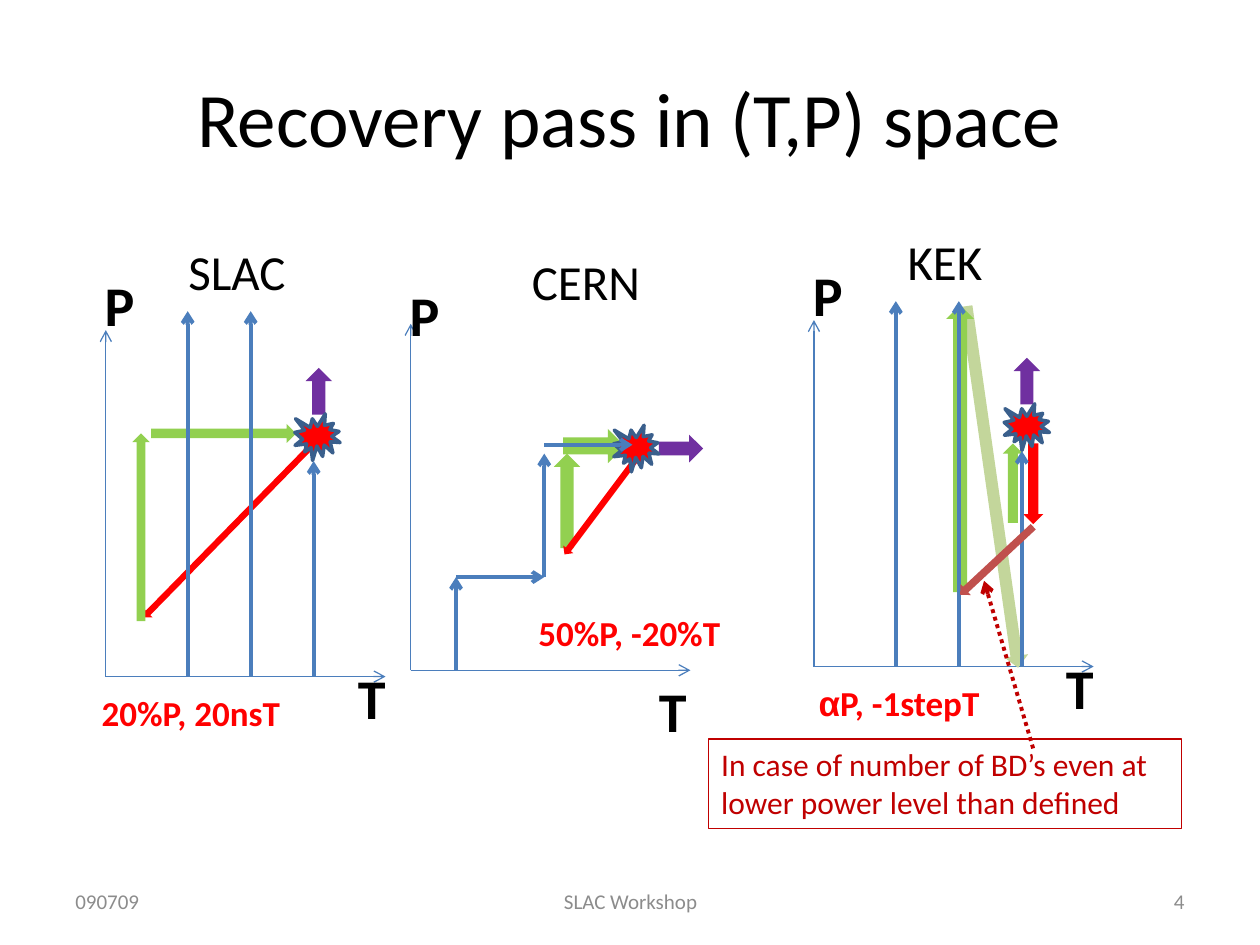
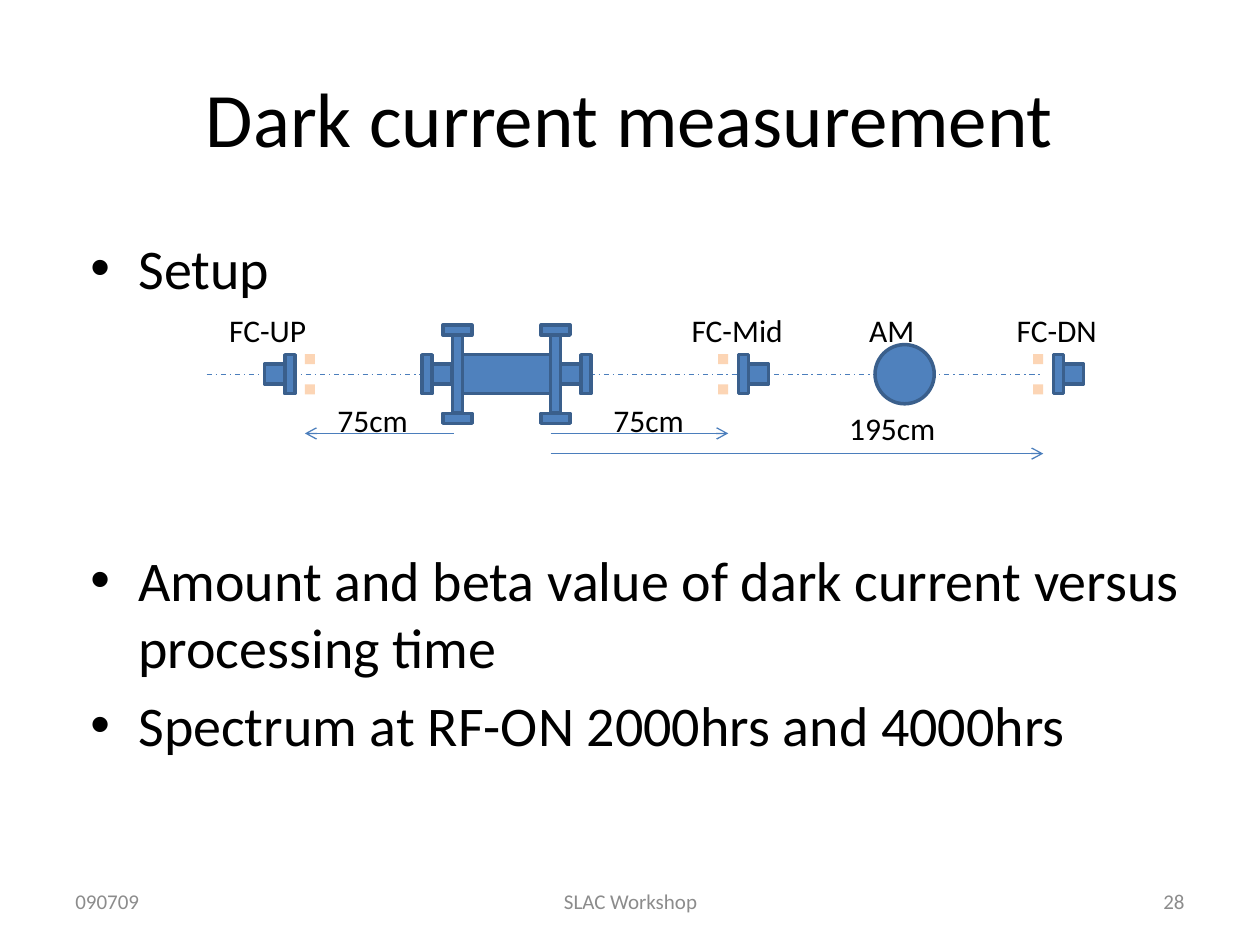
"""Build two slides on recovery paths and dark current measurement."""
import math
from dataclasses import dataclass

import pptx
import pptx.dml.color
import pptx.enum.dml
import pptx.enum.shapes
import pptx.enum.text
import pptx.oxml.ns
import pptx.util

Inches = pptx.util.Inches
SHAPE = pptx.enum.shapes.MSO_SHAPE
DASH = pptx.enum.dml.MSO_LINE
ALIGN = pptx.enum.text.PP_ALIGN
ANCHOR = pptx.enum.text.MSO_ANCHOR


@dataclass(frozen=True)
class Theme:
    font: str = "Calibri"
    symbol_font: str = "Arial"
    text: str = "000000"
    muted: str = "8C8C8C"
    line: str = "4B7EBC"
    outline: str = "3A5F8C"
    metal: str = "4F81BD"
    window: str = "FCD5B5"
    green: str = "92D050"
    pale_green: str = "C3D69B"
    red: str = "FF0000"
    brick: str = "C0504D"
    dark_red: str = "C00000"
    purple: str = "7030A0"
    title_size: int = 44
    body_size: int = 32
    name_size: int = 28
    rule_size: int = 20
    label_size: int = 18
    footer_size: int = 12
    thin: float = 0.75
    bold_line: float = 2.25
    outline_width: float = 2


def rgb(color):
    return pptx.dml.color.RGBColor.from_string(color)


def add_child(parent, tag, **attributes):
    child = parent.makeelement(pptx.oxml.ns.qn(tag), attributes)
    parent.append(child)
    return child


def write(shape, text, *, size, color, font, bold=False, align=ALIGN.LEFT,
          anchor=ANCHOR.TOP, symbols="", symbol_font=None):
    frame = shape.text_frame
    frame.word_wrap = True
    frame.vertical_anchor = anchor
    for index, line in enumerate(text.split("\n")):
        paragraph = frame.paragraphs[0] if index == 0 else frame.add_paragraph()
        paragraph.alignment = align
        rest = line.lstrip(symbols) if symbols else line
        lead = line[:len(line) - len(rest)]
        for part, face in ((lead, symbol_font), (rest, font)):
            if part:
                run = paragraph.add_run()
                run.text = part
                run.font.name = face
                run.font.size = pptx.util.Pt(size)
                run.font.bold = bold
                run.font.color.rgb = rgb(color)


class Sheet:
    def __init__(self, presentation, theme):
        self.presentation = presentation
        self.theme = theme
        self.slide = None

    def start(self, title, number):
        theme = self.theme
        self.slide = self.presentation.slides.add_slide(self.presentation.slide_layouts[6])
        self.text(title, 0.5, 0.3, 9, 1.25, size=theme.title_size,
                  align=ALIGN.CENTER, anchor=ANCHOR.MIDDLE)
        for text, left, width, align in (("090709", 0.5, 2.33, ALIGN.LEFT),
                                         ("SLAC Workshop", 3.42, 3.17, ALIGN.CENTER),
                                         (str(number), 7.17, 2.33, ALIGN.RIGHT)):
            self.text(text, left, 6.95, width, 0.4, size=theme.footer_size,
                      color=theme.muted, align=align, anchor=ANCHOR.MIDDLE)

    def text(self, text, left, top, width, height, **style):
        box = self.slide.shapes.add_textbox(Inches(left), Inches(top),
                                            Inches(width), Inches(height))
        self.fill_text(box, text, **style)
        return box

    def fill_text(self, shape, text, **style):
        theme = self.theme
        defaults = dict(size=theme.label_size, color=theme.text, font=theme.font,
                        symbol_font=theme.symbol_font)
        write(shape, text, **(defaults | style))

    def bullets(self, lines, left, top, width, height, gaps):
        box = self.text("\n".join(lines), left, top, width, height, size=self.theme.body_size)
        for paragraph, gap in zip(box.text_frame.paragraphs, gaps):
            paragraph.space_before = pptx.util.Pt(gap)
            properties = paragraph._p.get_or_add_pPr()
            properties.set("marL", str(Inches(0.38)))
            properties.set("indent", str(Inches(-0.38)))
            add_child(properties, "a:buFont", typeface=self.theme.symbol_font)
            add_child(properties, "a:buChar", char="•")

    def block(self, kind, center, width, height, fill=None, outline=None,
              outline_width=None, rotation=0):
        x, y = center
        shape = self.slide.shapes.add_shape(kind, Inches(x - width / 2), Inches(y - height / 2),
                                            Inches(width), Inches(height))
        shape.shadow.inherit = False
        shape.rotation = rotation
        if fill:
            shape.fill.solid()
            shape.fill.fore_color.rgb = rgb(fill)
        else:
            shape.fill.background()
        if outline:
            shape.line.color.rgb = rgb(outline)
            shape.line.width = pptx.util.Pt(outline_width or self.theme.outline_width)
        else:
            shape.line.fill.background()
        return shape

    def block_arrow(self, start, end, thickness, color):
        dx, dy = end[0] - start[0], end[1] - start[1]
        center = (start[0] + dx / 2, start[1] + dy / 2)
        self.block(SHAPE.RIGHT_ARROW, center, math.hypot(dx, dy), thickness, color,
                   rotation=math.degrees(math.atan2(dy, dx)) % 360)

    def line(self, start, end, color=None, width=None, dash=None, arrow=True):
        connector = self.slide.shapes.add_connector(
            pptx.enum.shapes.MSO_CONNECTOR.STRAIGHT, *map(Inches, (*start, *end)))
        connector.line.color.rgb = rgb(color or self.theme.line)
        connector.line.width = pptx.util.Pt(width or self.theme.thin)
        if dash:
            connector.line.dash_style = dash
        if arrow:
            add_child(connector.line._get_or_add_ln(), "a:tailEnd", type="arrow")
        add_child(connector._element.spPr, "a:effectLst")


def draw_panel(sheet, origin, name, rule, arrows, star, paths, name_at=(0.15, 3.5),
               t_at=(1.86, 0.15), p_at=(-0.14, 3.27), rule_at=(-0.22, -0.07)):
    """Draw one (T,P) diagram, with positions measured from its origin."""
    theme = sheet.theme

    def place(point):
        return origin[0] + point[0], origin[1] - point[1]

    for axis_end in ((2.22, 0), (0, 2.75)):
        sheet.line(origin, place(axis_end))
    for start, end, thickness, color in arrows:
        sheet.block_arrow(place(start), place(end), thickness, color)
    sheet.block(SHAPE.EXPLOSION1, place(star), 0.36, 0.37, theme.red, theme.outline)
    sheet.text(name, *place(name_at), 1.78, 0.55, size=theme.name_size, align=ALIGN.CENTER)
    for letter, corner in (("T", t_at), ("P", p_at)):
        sheet.text(letter, *place(corner), 0.5, 0.61, size=theme.body_size,
                   bold=True, align=ALIGN.CENTER)
    sheet.text(rule, *place(rule_at), 1.79, 0.42, size=theme.rule_size, color=theme.red,
               bold=True, align=ALIGN.CENTER, symbols="α")
    for start, end in paths:
        sheet.line(place(start), place(end), width=theme.bold_line)


def build_recovery(sheet):
    theme = sheet.theme
    sheet.start("Recovery pass in (T,P) space", 4)
    power_ramps = [((t, 0), (t, p)) for t, p in ((1.65, 1.71), (1.15, 2.9), (0.65, 2.9))]
    step_up = ((1.69, 2.08), (1.69, 2.45), 0.21, theme.purple)

    draw_panel(sheet, (3.26, 5.32), "CERN", "50%P, -20%T", [
        ((1.24, 0.97), (1.24, 1.72), 0.21, theme.green),
        ((1.21, 1.78), (1.7, 1.78), 0.27, theme.green),
        ((1.85, 1.76), (1.22, 0.92), 0.1, theme.red),
        ((1.97, 1.76), (2.32, 1.76), 0.22, theme.purple),
    ], (1.79, 1.76), [
        ((0.36, 0), (0.36, 0.74)),
        ((1.06, 0.74), (1.06, 1.72)),
        ((0.36, 0.74), (1.06, 0.74)),
        ((1.06, 1.79), (1.76, 1.79)),
    ], name_at=(0.5, 3.37), t_at=(1.83, 0), p_at=(-0.14, 3.14), rule_at=(0.84, 0.52))

    draw_panel(sheet, (0.84, 5.37), "SLAC", "20%P, 20nsT", [
        ((0.36, 1.93), (1.51, 1.93), 0.15, theme.green),
        ((1.69, 1.89), (0.3, 0.47), 0.1, theme.red),
        ((0.28, 0.44), (0.28, 1.93), 0.14, theme.green),
        step_up,
    ], (1.68, 1.9), power_ramps)

    draw_panel(sheet, (6.46, 5.29), "KEK", "αP, -1stepT", [
        ((1.21, 2.86), (1.62, -0.01), 0.19, theme.pale_green),
        ((1.16, 0.59), (1.16, 2.87), 0.22, theme.green),
        ((1.74, 1.77), (1.74, 1.13), 0.16, theme.red),
        ((1.58, 1.14), (1.58, 1.77), 0.16, theme.green),
        step_up,
    ], (1.69, 1.9), power_ramps)
    sheet.block_arrow((8.2, 4.18), (7.62, 4.72), 0.12, theme.brick)

    note = sheet.block(SHAPE.RECTANGLE, (7.5, 6.22), 3.75, 0.71,
                       outline=theme.dark_red, outline_width=theme.thin)
    sheet.fill_text(note, "In case of number of BD’s even at lower power level than defined",
                    color=theme.dark_red)
    sheet.line((8.2, 5.94), (7.81, 4.61), theme.dark_red, theme.bold_line, DASH.ROUND_DOT)


def build_dark_current(sheet):
    theme = sheet.theme
    beam_y = 2.97
    sheet.start("Dark current measurement", 28)
    sheet.bullets(["Setup",
                   "Amount and beta value of dark current versus processing time",
                   "Spectrum at RF-ON 2000hrs and 4000hrs"],
                  0.62, 1.8, 9, 4.95, gaps=(0, 140, 6.4))
    sheet.line((1.64, beam_y), (8.28, beam_y), dash=DASH.DASH_DOT, arrow=False)

    def metal(x, width, height, offset=0, kind=SHAPE.RECTANGLE):
        sheet.block(kind, (x, beam_y + offset), width, height, theme.metal, theme.outline)

    for window_x, side in ((2.46, -1), (5.74, 1), (8.24, 1)):
        for offset in (-0.12, 0.12):
            sheet.block(SHAPE.RECTANGLE, (window_x, beam_y + offset), 0.08, 0.08, theme.window)
        metal(window_x + 0.16 * side, 0.08, 0.31)
        metal(window_x + 0.28 * side, 0.16, 0.16)

    cavity_x = 4.02
    metal(cavity_x, 0.7, 0.31)
    for side in (1, -1):
        metal(cavity_x + 0.39 * side, 0.08, 0.62)
        metal(cavity_x + 0.51 * side, 0.16, 0.16)
        metal(cavity_x + 0.63 * side, 0.08, 0.31)
        for offset in (-0.35, 0.35):
            metal(cavity_x + 0.39 * side, 0.23, 0.08, offset)
    metal(7.18, 0.47, 0.47, kind=SHAPE.OVAL)

    for start_x, end_x, y in ((3.6, 2.42, 3.44), (4.37, 5.78, 3.44), (4.37, 8.28, 3.6)):
        sheet.line((start_x, y), (end_x, y))
    for label, left, top, width in (("75cm", 2.58, 3.13, 0.86), ("75cm", 4.77, 3.13, 0.86),
                                    ("195cm", 6.64, 3.2, 1.02), ("FC-UP", 1.72, 2.42, 0.86),
                                    ("FC-Mid", 5.39, 2.42, 1.02), ("AM", 6.8, 2.42, 0.7),
                                    ("FC-DN", 7.97, 2.42, 0.86)):
        sheet.text(label, left, top, width, 0.4)


def main():
    presentation = pptx.Presentation()
    presentation.slide_width = Inches(10)
    presentation.slide_height = Inches(7.5)
    sheet = Sheet(presentation, Theme())
    build_recovery(sheet)
    build_dark_current(sheet)
    presentation.save("out.pptx")


if __name__ == "__main__":
    main()
